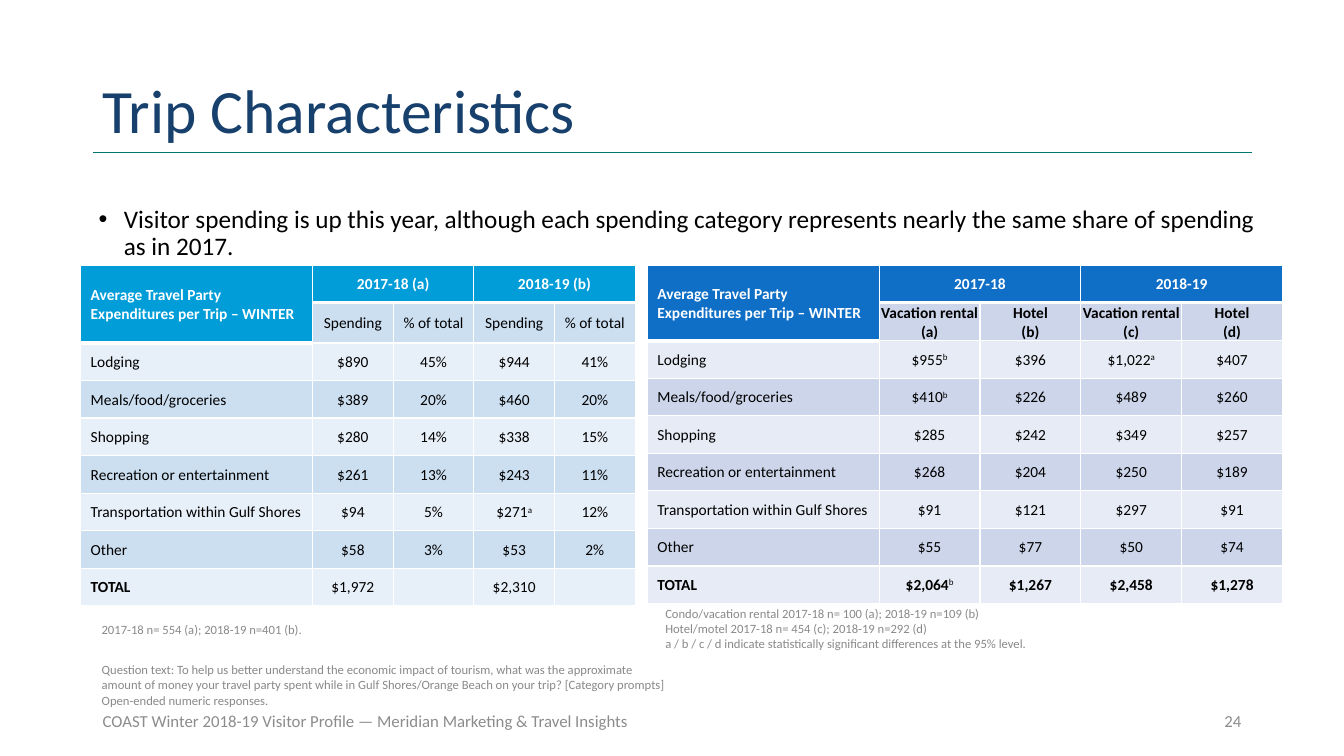
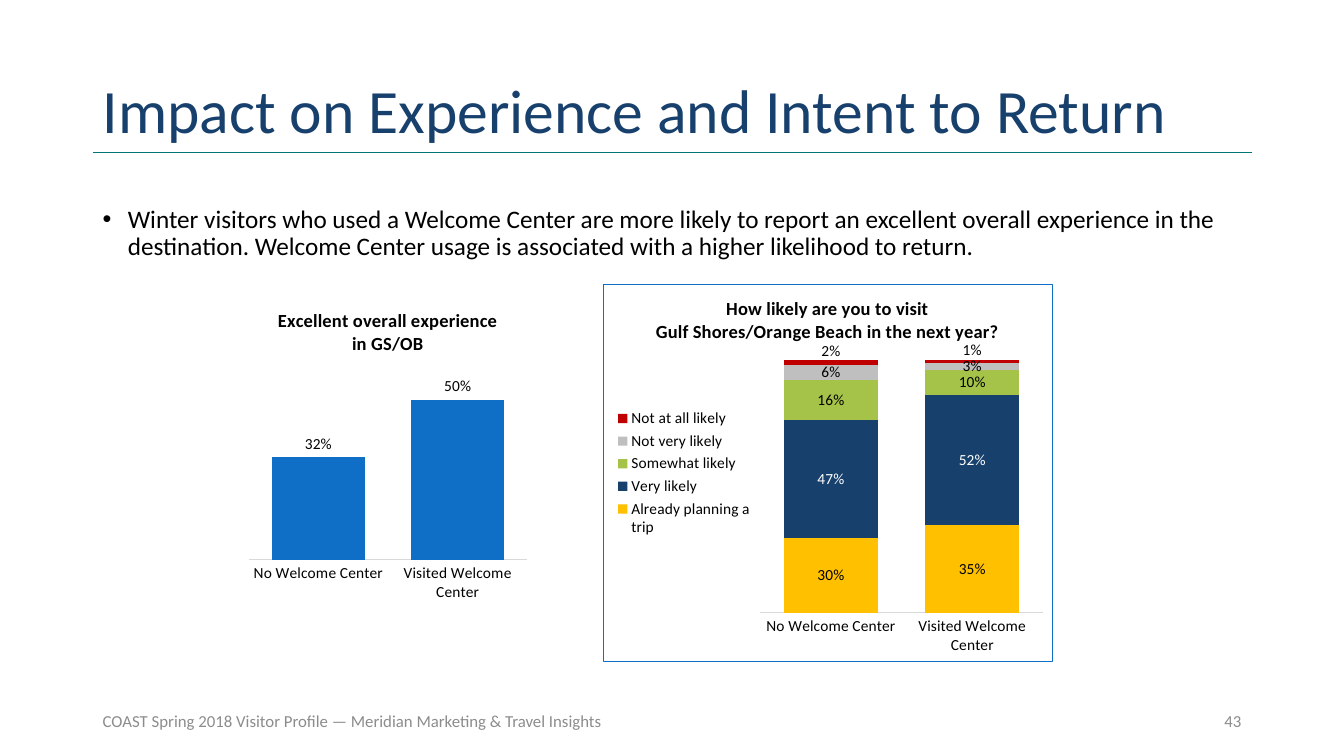
from dataclasses import dataclass
from typing import Optional

from lxml.etree import SubElement
from pptx import Presentation
from pptx.chart.data import CategoryChartData
from pptx.dml.color import RGBColor
from pptx.enum.chart import XL_CHART_TYPE, XL_LABEL_POSITION, XL_LEGEND_POSITION, XL_TICK_MARK
from pptx.enum.shapes import MSO_CONNECTOR
from pptx.enum.text import MSO_ANCHOR, PP_ALIGN
from pptx.oxml import parse_xml
from pptx.oxml.ns import nsdecls, qn
from pptx.util import Pt

PX = 9144  # EMU per px: 100 px to the inch
FONT = "Calibri"
COLORS = {
    "white": "FFFFFF", "black": "000000", "navy": "17406D", "teal": "007773",
    "footer": "8C8C8C", "note": "898989", "axis": "D9D9D9",
    "cyan": "009DD9", "cyan_mid": "CCDFF1", "cyan_light": "E7EFF8",
    "blue": "0F6FC6", "blue_mid": "CCD5EA", "blue_light": "E7EBF5",
    "gold": "FFC000", "green": "A5C249", "gray": "BFBFBF", "red": "C00000",
}
HEADING = "Average Travel Party\nExpenditures per Trip – WINTER"
CATEGORIES = ["No Welcome Center", "Visited Welcome Center"]


@dataclass(frozen=True)
class Box:
    left: int
    top: int
    width: int
    height: int

    def emu(self) -> list[int]:
        return [value * PX for value in (self.left, self.top, self.width, self.height)]


@dataclass(frozen=True)
class Note:
    box: Box
    text: str


@dataclass(frozen=True)
class SpendingTable:
    box: Box
    label_width: int
    subhead_height: int
    palette: str
    years: tuple[str, str]
    subheads: list[str]
    bold_subheads: bool
    bold_totals: bool
    rows: list[list[str]]


@dataclass(frozen=True)
class Series:
    name: str
    values: tuple[float, float]
    color: str
    label_color: str = "black"
    label_shift: float = 0


@dataclass(frozen=True)
class BarChart:
    box: Box
    kind: XL_CHART_TYPE
    title: str
    maximum: float
    series: list[Series]
    title_layout: tuple[float, ...]
    plot_layout: tuple[float, ...]
    legend_layout: Optional[tuple[float, ...]] = None
    border: Optional[str] = None


TABLES = [
    SpendingTable(
        Box(80, 263, 550, 338), 230, 40, "cyan", ("2017-18 (a)", "2018-19 (b)"),
        ["Spending", "% of total"] * 2, False, False,
        [["Lodging", "$890", "45%", "$944", "41%"],
         ["Meals/food/groceries", "$389", "20%", "$460", "20%"],
         ["Shopping", "$280", "14%", "$338", "15%"],
         ["Recreation or entertainment", "$261", "13%", "$243", "11%"],
         ["Transportation within Gulf Shores", "$94", "5%", "$271^a", "12%"],
         ["Other", "$58", "3%", "$53", "2%"],
         ["TOTAL", "$1,972", "", "$2,310", ""]]),
    SpendingTable(
        Box(642, 263, 630, 335), 230, 37, "blue", ("2017-18", "2018-19"),
        ["Vacation rental\n(a)", "Hotel\n(b)", "Vacation rental\n(c)", "Hotel\n(d)"], True, True,
        [["Lodging", "$955^b", "$396", "$1,022^a", "$407"],
         ["Meals/food/groceries", "$410^b", "$226", "$489", "$260"],
         ["Shopping", "$285", "$242", "$349", "$257"],
         ["Recreation or entertainment", "$268", "$204", "$250", "$189"],
         ["Transportation within Gulf Shores", "$91", "$121", "$297", "$91"],
         ["Other", "$55", "$77", "$50", "$74"],
         ["TOTAL", "$2,064^b", "$1,267", "$2,458", "$1,278"]]),
]
NOTES = [
    Note(Box(91, 612, 524, 25), "2017-18 n= 554 (a); 2018-19 n=401 (b)."),
    Note(Box(650, 596, 576, 56),
         "Condo/vacation rental 2017-18 n= 100 (a); 2018-19 n=109 (b)\n"
         "Hotel/motel 2017-18 n= 454 (c); 2018-19 n=292 (d)\n"
         "a / b / c / d indicate statistically significant differences at the 95% level."),
    Note(Box(91, 652, 588, 56),
         "Question text: To help us better understand the economic impact of tourism, what was the "
         "approximate amount of money your travel party spent while in Gulf Shores/Orange Beach on "
         "your trip? [Category prompts] Open-ended numeric responses."),
]
CHARTS = [
    BarChart(Box(241, 290, 288, 312), XL_CHART_TYPE.COLUMN_CLUSTERED,
             "Excellent overall experience\nin GS/OB", 0.6,
             [Series("Series 1", (0.32, 0.5), "blue")],
             (0.11, 0.04), (0.02, 0.24, 0.96, 0.61)),
    BarChart(Box(598, 282, 446, 375), XL_CHART_TYPE.COLUMN_STACKED_100,
             "How likely are you to visit\nGulf Shores/Orange Beach in the next year?", 1,
             [Series("Already planning a trip", (0.3, 0.35), "gold"),
              Series("Very likely", (0.47, 0.52), "navy", "white"),
              Series("Somewhat likely", (0.16, 0.1), "green"),
              Series("Not very likely", (0.06, 0.03), "gray"),
              Series("Not at all likely", (0.02, 0.01), "red", label_shift=-0.03)],
             (0.11, 0.02), (0.35, 0.2, 0.63, 0.67), (0.02, 0.32, 0.32, 0.36), "blue"),
]


def rgb(color: str) -> RGBColor:
    return RGBColor.from_string(COLORS[color])


def style_font(font, size: float, color: str, bold: bool = False) -> None:
    font.name, font.size, font.bold = FONT, Pt(size), bold
    font.color.rgb = rgb(color)


def write_text(frame, text: str, size: float, color: str, bold: bool = False,
               align=PP_ALIGN.LEFT) -> None:
    """Newlines start paragraphs; text after ^ is superscript."""
    for index, line in enumerate(text.split("\n")):
        paragraph = frame.add_paragraph() if index else frame.paragraphs[0]
        paragraph.alignment = align
        for position, part in enumerate(line.split("^")):
            if not part:
                continue
            run = paragraph.add_run()
            run.text = part
            style_font(run.font, size, color, bold and position == 0)
            if position:
                run._r.get_or_add_rPr().set("baseline", "30000")


def add_text(slide, box: Box, text: str, size: float, color: str,
             anchor=MSO_ANCHOR.TOP, align=PP_ALIGN.LEFT):
    frame = slide.shapes.add_textbox(*box.emu()).text_frame
    frame.word_wrap = True
    frame.vertical_anchor = anchor
    write_text(frame, text, size, color, align=align)
    return frame.paragraphs[0]


def add_frame(presentation, title: str, body: str, body_box: Box, footer: str, number: int):
    """Title, rule, bulleted statement and footer shared by the slides."""
    slide = presentation.slides.add_slide(presentation.slide_layouts[6])
    rule = slide.shapes.add_connector(MSO_CONNECTOR.STRAIGHT, 92 * PX, 151 * PX, 1242 * PX, 151 * PX)
    rule.line.color.rgb, rule.line.width = rgb("teal"), Pt(0.5)
    SubElement(rule._element.spPr, qn("a:effectLst"))
    middle = MSO_ANCHOR.MIDDLE
    add_text(slide, Box(92, 40, 1150, 145), title, 44, "navy", middle).line_spacing = 0.9

    statement = add_text(slide, body_box, body, 18, "black")
    statement.line_spacing, statement.space_before = 0.9, Pt(10)
    properties = statement._p.get_or_add_pPr()
    properties.set("marL", str(25 * PX))
    properties.set("indent", str(-25 * PX))
    SubElement(properties, qn("a:buFont")).set("typeface", "Arial")
    SubElement(properties, qn("a:buChar")).set("char", "•")

    add_text(slide, Box(92, 695, 976, 40), footer, 12, "footer", middle)
    add_text(slide, Box(1079, 695, 162, 40), str(number), 12, "footer", middle, PP_ALIGN.RIGHT)
    return slide


def style_cell(cell, fill: str, is_label: bool, is_header: bool) -> None:
    cell.vertical_anchor = MSO_ANCHOR.MIDDLE
    cell.margin_left = (10 if is_label else 1) * PX
    cell.margin_right = cell.margin_top = PX
    cell.margin_bottom = 0
    properties = cell._tc.get_or_add_tcPr()
    for side in "LRTB":
        width = Pt(3 if is_header and side == "B" else 1)
        properties.append(parse_xml(
            f'<a:ln{side} {nsdecls("a")} w="{width}"><a:solidFill>'
            f'<a:srgbClr val="{COLORS["white"]}"/></a:solidFill></a:ln{side}>'))
    cell.fill.solid()
    cell.fill.fore_color.rgb = rgb(fill)


def add_spending_table(slide, data: SpendingTable) -> None:
    grid = [[HEADING, data.years[0], "", data.years[1], ""], ["", *data.subheads], *data.rows]
    last = len(grid) - 1
    table = slide.shapes.add_table(len(grid), 5, *data.box.emu()).table
    row_height = (data.box.height - data.subhead_height) * PX // last
    for index, row in enumerate(table.rows):
        row.height = data.subhead_height * PX if index == 1 else row_height
    for index, column in enumerate(table.columns):
        column.width = (data.box.width - data.label_width) * PX // 4 if index else data.label_width * PX

    for row, values in enumerate(grid):
        for column, text in enumerate(values):
            cell = table.cell(row, column)
            is_header, is_label = row == 0, column == 0
            shade = "" if is_header or (row == 1 and is_label) else "_mid" if row % 2 else "_light"
            style_cell(cell, data.palette + shade, is_label, is_header)
            bold = (is_header or (row == 1 and data.bold_subheads)
                    or (row == last and (is_label or data.bold_totals)))
            write_text(cell.text_frame, text, 11, "white" if is_header else "black", bold,
                       PP_ALIGN.LEFT if is_label else PP_ALIGN.CENTER)
    for first, end in (((0, 0), (1, 0)), ((0, 1), (0, 2)), ((0, 3), (0, 4))):
        table.cell(*first).merge(table.cell(*end))


def set_layout(parent, index: int, values: tuple[float, ...], inner: bool = False,
               edge: bool = True) -> None:
    """Place a chart part by fractions of the chart (x, y, width, height)."""
    for old in parent.findall(qn("c:layout")):
        parent.remove(old)
    target = '<c:layoutTarget val="inner"/>' if inner else ""
    modes = '<c:xMode val="edge"/><c:yMode val="edge"/>' if edge else ""
    sizes = "".join(f'<c:{tag} val="{value}"/>' for tag, value in zip("xywh", values))
    parent.insert(index, parse_xml(
        f'<c:layout {nsdecls("c")}><c:manualLayout>{target}{modes}{sizes}</c:manualLayout></c:layout>'))


def style_series(series, data: Series, position) -> None:
    series.format.fill.solid()
    series.format.fill.fore_color.rgb = rgb(data.color)
    labels = series.data_labels
    labels.show_value, labels.position = True, position
    labels.number_format, labels.number_format_is_linked = "0%", False
    style_font(labels.font, 11, data.label_color)
    if data.label_shift:
        for index in range(len(data.values)):
            style_font(series.points[index].data_label.font, 11, data.label_color)
        for label in labels._element.findall(qn("c:dLbl")):
            set_layout(label, 1, (0, data.label_shift), edge=False)


def add_bar_chart(slide, data: BarChart) -> None:
    chart_data = CategoryChartData(number_format="0%")
    chart_data.categories = CATEGORIES
    for item in data.series:
        chart_data.add_series(item.name, item.values)
    chart = slide.shapes.add_chart(data.kind, *data.box.emu(), chart_data).chart
    style_font(chart.font, 11, "black")
    chart.has_title = True
    write_text(chart.chart_title.text_frame, data.title, 13.2, "black", True, PP_ALIGN.CENTER)
    set_layout(chart.chart_title._element, 1, data.title_layout)

    # Axes and bars
    values, categories = chart.value_axis, chart.category_axis
    values.visible = values.has_major_gridlines = False
    values.minimum_scale, values.maximum_scale = 0, data.maximum
    categories.major_tick_mark = categories.minor_tick_mark = XL_TICK_MARK.NONE
    categories.format.line.color.rgb = rgb("axis")
    categories.format.line.width = Pt(0.75)
    style_font(categories.tick_labels.font, 11, "black")
    plot = chart.plots[0]
    plot.gap_width, plot.vary_by_categories = 50, False
    stacked = data.kind == XL_CHART_TYPE.COLUMN_STACKED_100
    plot.overlap = 100 if stacked else 0
    position = XL_LABEL_POSITION.CENTER if stacked else XL_LABEL_POSITION.OUTSIDE_END
    for series, item in zip(plot.series, data.series):
        style_series(series, item, position)
    set_layout(chart._chartSpace.chart.plotArea, 0, data.plot_layout, inner=True)

    # Legend and border
    chart.has_legend = data.legend_layout is not None
    if data.legend_layout:
        chart.legend.position, chart.legend.include_in_layout = XL_LEGEND_POSITION.LEFT, False
        style_font(chart.legend.font, 11, "black")
        set_layout(chart.legend._element, 1, data.legend_layout)
    line = (f'<a:solidFill><a:srgbClr val="{COLORS[data.border]}"/></a:solidFill>'
            if data.border else "<a:noFill/>")
    chart._chartSpace.chart.addnext(parse_xml(
        f'<c:spPr {nsdecls("c", "a")}><a:noFill/><a:ln w="{Pt(0.75)}">{line}</a:ln></c:spPr>'))


def main() -> None:
    presentation = Presentation()
    presentation.slide_width, presentation.slide_height = 1333 * PX, 750 * PX

    spending = add_frame(
        presentation, "Trip Characteristics",
        "Visitor spending is up this year, although each spending category represents nearly "
        "the same share of spending as in 2017.", Box(88, 200, 1175, 495),
        "COAST Winter 2018-19 Visitor Profile — Meridian Marketing & Travel Insights", 24)
    for table in TABLES:
        add_spending_table(spending, table)
    for note in NOTES:
        add_text(spending, note.box, note.text, 9, "note")

    impact = add_frame(
        presentation, "Impact on Experience and Intent to Return",
        "Winter visitors who used a Welcome Center are more likely to report an excellent overall "
        "experience in the destination. Welcome Center usage is associated with a higher "
        "likelihood to return.", Box(92, 200, 1150, 476),
        "COAST Spring 2018 Visitor Profile — Meridian Marketing & Travel Insights", 43)
    for chart in CHARTS:
        add_bar_chart(impact, chart)
    presentation.save("out.pptx")


if __name__ == "__main__":
    main()
